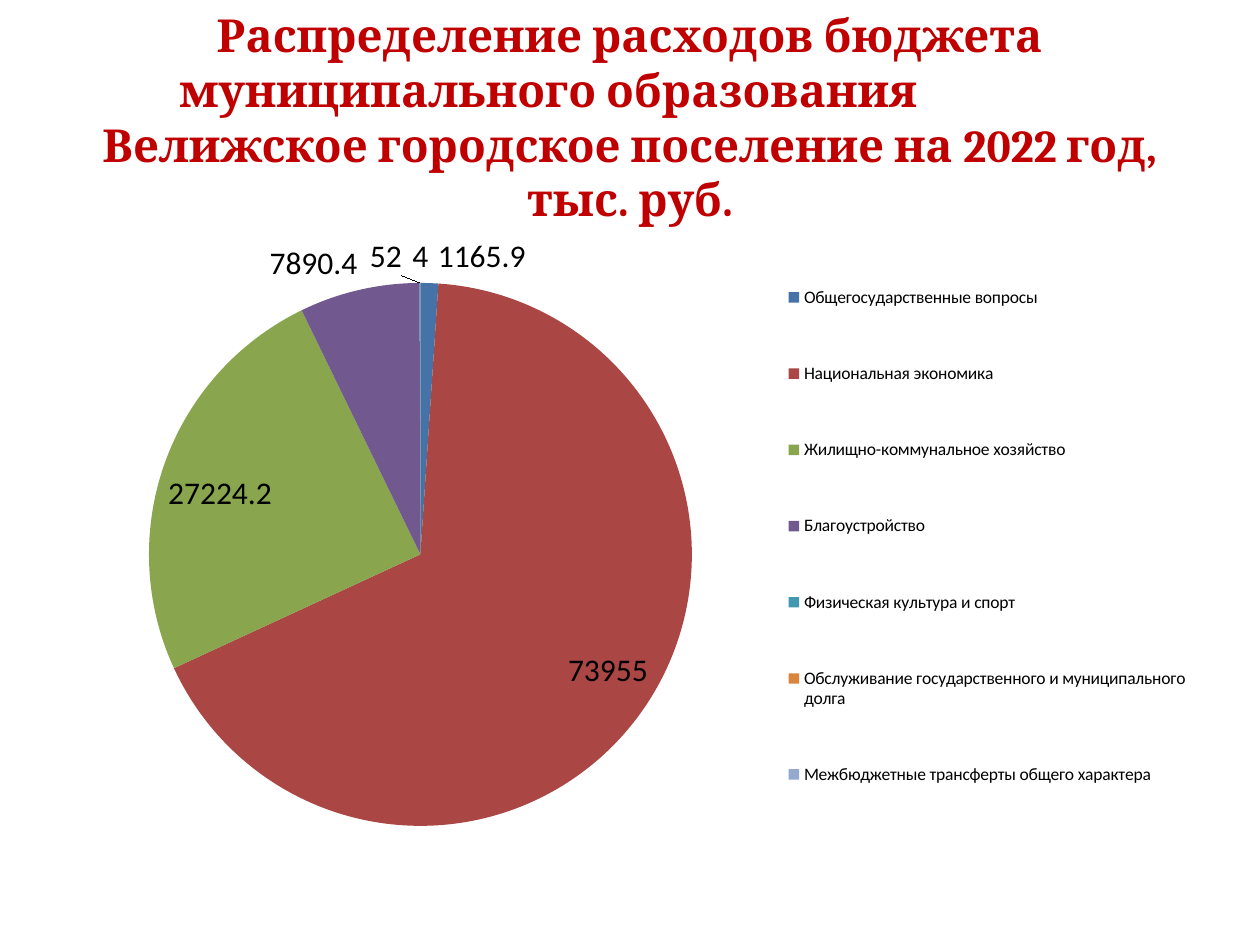
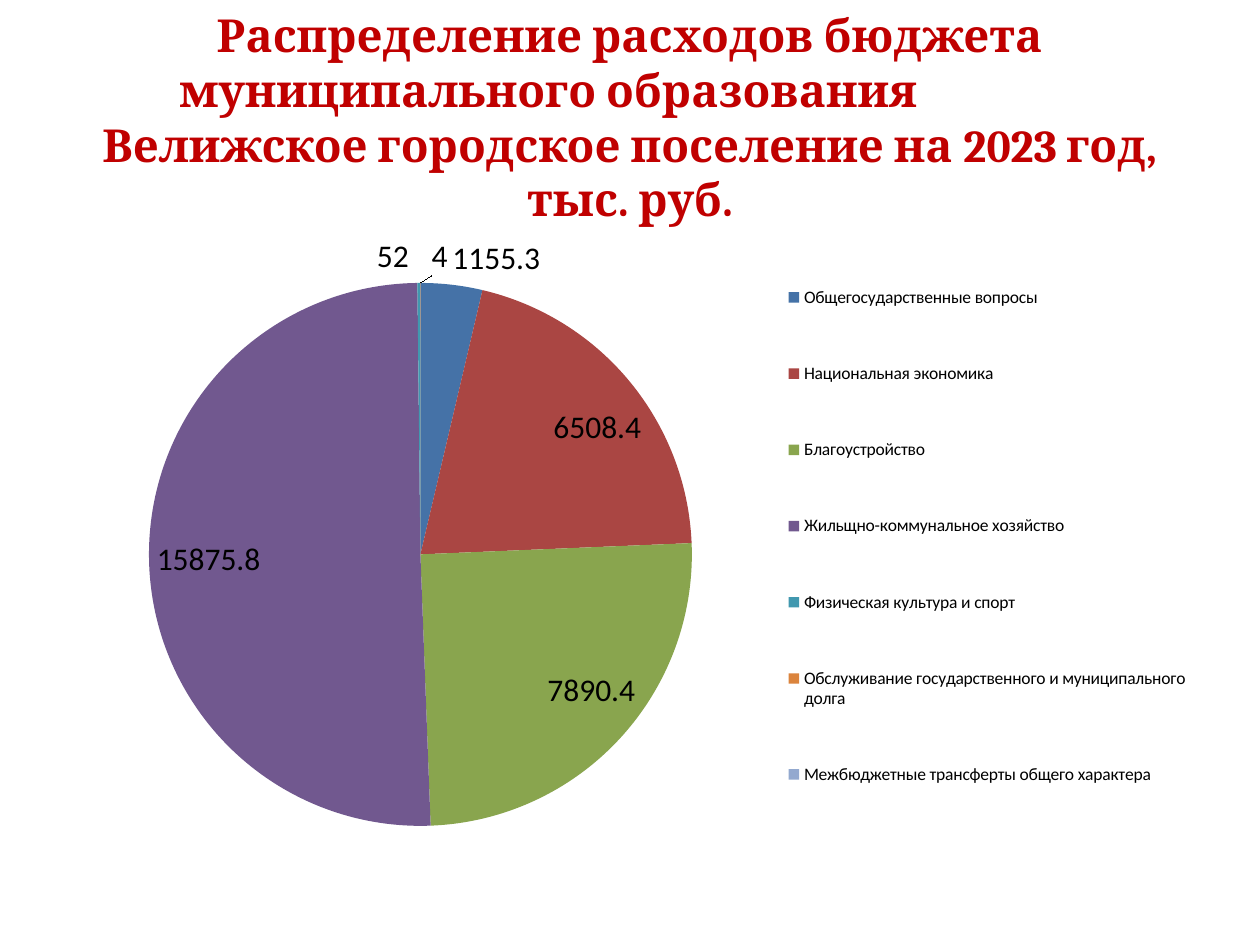
"""Build two slides with pie charts of a town budget's spending by year."""
from lxml import etree
from pptx import Presentation
from pptx.chart.data import CategoryChartData
from pptx.dml.color import RGBColor
from pptx.enum.chart import XL_CHART_TYPE, XL_LABEL_POSITION, XL_LEGEND_POSITION
from pptx.enum.text import MSO_ANCHOR, PP_ALIGN
from pptx.oxml import parse_xml
from pptx.oxml.ns import nsdecls, qn
from pptx.util import Pt

PIE = XL_CHART_TYPE.PIE
BEST_FIT = XL_LABEL_POSITION.BEST_FIT
LEGEND_RIGHT = XL_LEGEND_POSITION.RIGHT
MIDDLE = MSO_ANCHOR.MIDDLE
LEFT, CENTER = PP_ALIGN.LEFT, PP_ALIGN.CENTER

GENERAL = "Общегосударственные вопросы"
ECONOMY = "Национальная экономика"
GREENING = "Благоустройство"
SPORT = "Физическая культура и спорт"
DEBT = "Обслуживание государственного и муниципального долга"
TRANSFERS = "Межбюджетные трансферты общего характера"

BUDGETS = {
    2022: [
        (GENERAL, 1165.9), (ECONOMY, 73955), ("Жилищно-коммунальное хозяйство", 27224.2),
        (GREENING, 7890.4), (SPORT, 52), (DEBT, 4), (TRANSFERS, 0),
    ],
    2023: [
        (GENERAL, 1155.3), (ECONOMY, 6508.4), (GREENING, 7890.4),
        ("Жильщно-коммунальное хозяйство", 15875.8), (SPORT, 52), (DEBT, 4), (TRANSFERS, 0),
    ],
}
TITLE_LINES = [
    ("Распределение расходов бюджета", CENTER, 0),
    ("муниципального образования", LEFT, 104),
    ("Велижское городское поселение на {year} год, тыс. руб.", CENTER, 0),
]
COLORS = {
    "title": "C00000", "text": "000000",
    "slices": ["4572A7", "AA4643", "89A54E", "71588F", "4198AF", "DB843D", "93A9CF"],
}
PX = 914400 // 126
SLIDE = (1260, 945)
TITLE_BOX = (63, 38, 1134, 157)
CHART_BOX = (63, 220, 1134, 624)
PIE_BOX = (149, 283, 543, 543)
LEGEND_BOX = (777, 231, 420, 610)


def px(lengths):
    """Turn pixel lengths into EMU."""
    return [length * PX for length in lengths]


def style(font, size, color, name, bold=False):
    """Set the look of a font."""
    font.size, font.name, font.bold = Pt(size), name, bold
    font.color.rgb = RGBColor.from_string(color)


def add_line(para, text, align=CENTER, indent=0, **look):
    """Write one formatted paragraph."""
    para.alignment = align
    if indent:
        properties = para._p.get_or_add_pPr()
        properties.set("marL", str(indent * PX))
        properties.set("indent", "0")
    span = para.add_run()
    span.text = text
    style(span.font, **look)


def add_title(page, year):
    """Add the slide heading."""
    frame = page.shapes.add_textbox(*px(TITLE_BOX)).text_frame
    frame.word_wrap = True
    frame.vertical_anchor = MIDDLE
    for index, (text, align, indent) in enumerate(TITLE_LINES):
        para = frame.add_paragraph() if index else frame.paragraphs[0]
        add_line(para, text.format(year=year), align, indent,
                 size=26, color=COLORS["title"], name="Cambria", bold=True)


def manual_layout(box, inner=False):
    """Describe a box as fractions of the chart area."""
    left, top, width, height = CHART_BOX
    fractions = {
        "x": (box[0] - left) / width, "y": (box[1] - top) / height,
        "w": box[2] / width, "h": box[3] / height,
    }
    target = '<c:layoutTarget val="inner"/>' if inner else ""
    modes = '<c:xMode val="edge"/><c:yMode val="edge"/>'
    sizes = "".join(f'<c:{key} val="{value:.4f}"/>' for key, value in fractions.items())
    return parse_xml(f'<c:layout {nsdecls("c")}><c:manualLayout>{target}{modes}{sizes}'
                     "</c:manualLayout></c:layout>")


def place(element, layout, index):
    """Put a manual layout into a chart part."""
    for old in element.findall(qn("c:layout")):
        element.remove(old)
    element.insert(index, layout)


def hide_label(labels, index):
    """Delete the label of one slice."""
    label = etree.Element(qn("c:dLbl"))
    etree.SubElement(label, qn("c:idx")).set("val", str(index))
    etree.SubElement(label, qn("c:delete")).set("val", "1")
    labels._element.insert(0, label)


def add_pie(page, budget):
    """Add the pie chart with its legend and labels."""
    data = CategoryChartData()
    data.categories = [name for name, amount in budget]
    data.add_series("Расходы", [amount for name, amount in budget])
    chart = page.shapes.add_chart(PIE, *px(CHART_BOX), data).chart
    style(chart.font, 18, COLORS["text"], "Calibri")
    chart.has_title = False
    chart.has_legend = True
    legend = chart.legend
    legend.position = LEGEND_RIGHT
    legend.include_in_layout = False
    style(legend.font, 10, COLORS["text"], "Calibri")
    place(legend._element, manual_layout(LEGEND_BOX), 1)
    place(chart._chartSpace.chart.plotArea, manual_layout(PIE_BOX, inner=True), 0)

    plot = chart.plots[0]
    plot.vary_by_categories = True
    series = plot.series[0]
    labels = series.data_labels
    labels.show_value = True
    labels.position = BEST_FIT
    for index, (name, amount) in enumerate(budget):
        fill = series.points[index].format.fill
        fill.solid()
        fill.fore_color.rgb = RGBColor.from_string(COLORS["slices"][index])
        if not amount:
            hide_label(labels, index)


def main():
    """Build and save the deck."""
    deck = Presentation()
    deck.slide_width, deck.slide_height = px(SLIDE)
    for year, budget in BUDGETS.items():
        page = deck.slides.add_slide(deck.slide_layouts[6])
        add_title(page, year)
        add_pie(page, budget)
    deck.save("out.pptx")


if __name__ == "__main__":
    main()
